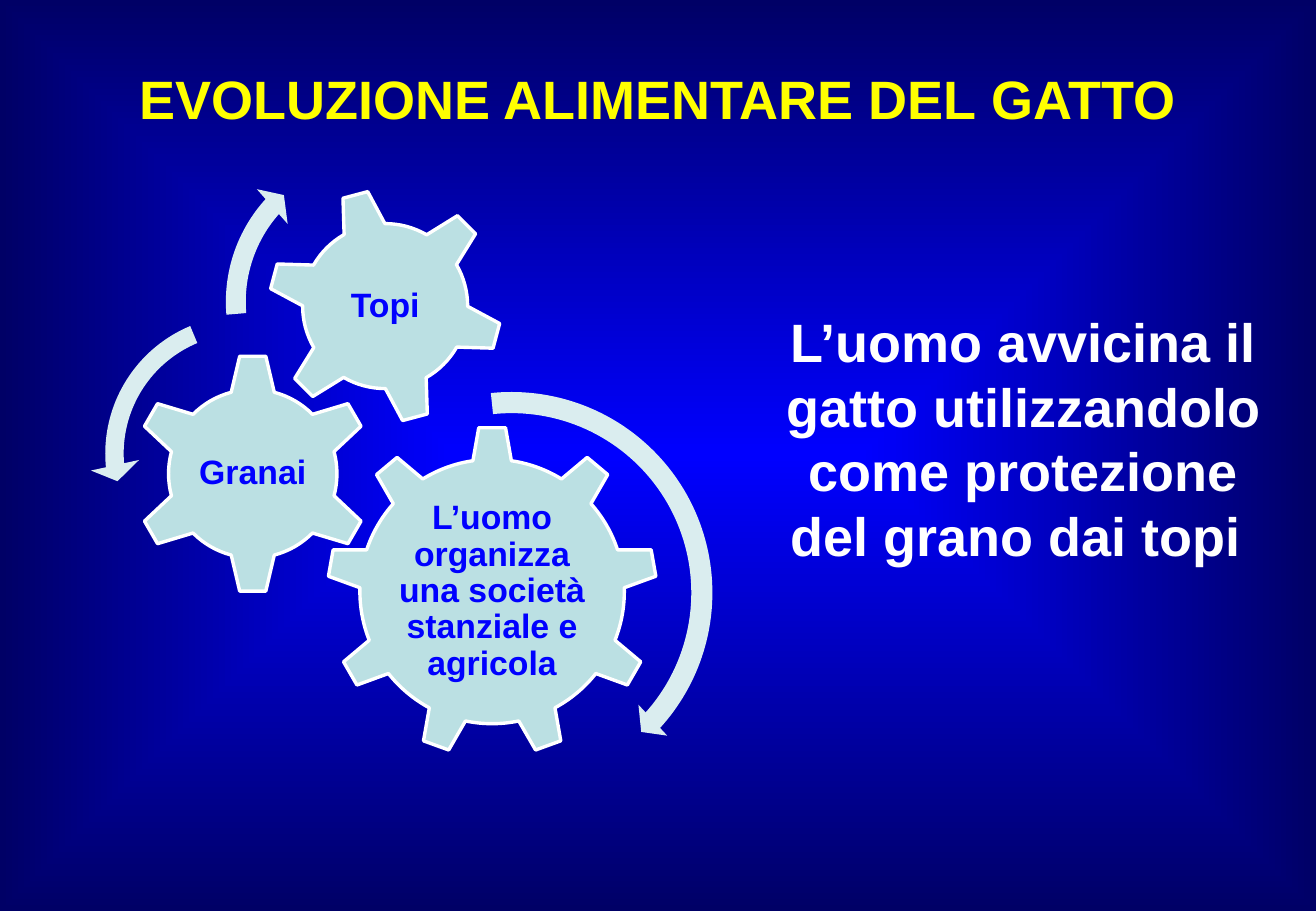
from dataclasses import dataclass
from lxml.etree import SubElement
from pptx import Presentation
from pptx.dml.color import RGBColor
from pptx.enum.shapes import MSO_SHAPE
from pptx.enum.text import MSO_ANCHOR, PP_ALIGN
from pptx.oxml.ns import qn
from pptx.util import Inches, Pt


@dataclass(frozen=True)
class Theme:
    font: str = "Arial"
    glow: str = "0000FF"
    edge: str = "000066"
    title: str = "FFFF00"
    body: str = "FFFFFF"
    gear: str = "BBE0E3"
    outline: str = "FFFFFF"
    arrow: str = "DAEDEF"
    label: str = "0000FF"
    heading_size: int = 32
    label_size: int = 20


@dataclass(frozen=True)
class Box:
    left: float
    top: float
    width: float
    height: float

    def centred(self, x, y, width, height):
        across, down = self.width / 100, self.height / 100
        return Box(self.left + (x - width / 2) * across,
                   self.top + (y - height / 2) * down,
                   width * across, height * down)

    def emu(self):
        return [Inches(v) for v in (self.left, self.top, self.width, self.height)]


THEME = Theme()
PAGE = Box(0, 0, 10.83, 7.5)
TITLE = Box(0.54, 0.3, 9.75, 1.01)
GEARS = Box(1, 1.5, 5, 5)
MESSAGE = Box(6.27, 2.49, 4.31, 2.26)


def paint_background(slide):
    fill = slide.background.fill
    fill.gradient()
    for stop, color in zip(fill.gradient_stops, (THEME.glow, THEME.edge)):
        stop.color.rgb = RGBColor.from_string(color)
    gradient = slide.element.xpath(".//a:gradFill")[0]
    gradient.remove(gradient.find(qn("a:lin")))
    radial = SubElement(gradient, qn("a:path"))
    radial.set("path", "shape")
    focus = SubElement(radial, qn("a:fillToRect"))
    for side in "ltrb":
        focus.set(side, "50000")


def add_text(slide, box, text, size, color, anchor=MSO_ANCHOR.MIDDLE, inset=None, spacing=None):
    frame = slide.shapes.add_textbox(*box.emu()).text_frame
    frame.word_wrap = True
    frame.vertical_anchor = anchor
    if inset is not None:
        frame.margin_left = frame.margin_right = Inches(inset)
        frame.margin_top = frame.margin_bottom = Inches(inset)
    paragraph = frame.paragraphs[0]
    paragraph.text = text
    paragraph.alignment = PP_ALIGN.CENTER
    paragraph.line_spacing = spacing
    font = paragraph.font
    font.name, font.size, font.bold = THEME.font, Pt(size), True
    font.color.rgb = RGBColor.from_string(color)


def add_solid(slide, preset, box, color):
    solid = slide.shapes.add_shape(preset, *box.emu())
    solid.shadow.inherit = False
    solid.fill.solid()
    solid.fill.fore_color.rgb = RGBColor.from_string(color)
    solid.line.fill.background()
    return solid


def add_gear(slide, box, preset, x, y, size, rotation, text, label_width, label_height):
    gear = add_solid(slide, preset, box.centred(x, y, size, size), THEME.gear)
    gear.rotation = rotation
    gear.line.color.rgb = RGBColor.from_string(THEME.outline)
    gear.line.width = Pt(2)
    add_text(slide, box.centred(x, y, label_width, label_height), text,
             THEME.label_size, THEME.label, inset=0.03, spacing=0.9)


def add_turn(slide, box, preset, x, y, size, adjustments):
    turn = add_solid(slide, preset, box.centred(x, y, size, size), THEME.arrow)
    for index, value in enumerate(adjustments):
        turn.adjustments[index] = value


def draw_gears(slide, box):
    gears = (
        (MSO_SHAPE.GEAR_9, 61, 67.4, 54.4, 0,
         "L’uomo organizza una società stanziale e agricola", 32.6, 28),
        (MSO_SHAPE.GEAR_6, 21.6, 48, 39.6, 0, "Granai", 19.6, 19.6),
        (MSO_SHAPE.GEAR_6, 43.4, 20.4, 38.8, 345, "Topi", 21.8, 21.8),
    )
    turns = (
        (MSO_SHAPE.CIRCULAR_ARROW, 64.2, 67.6, 69.6,
         (0.05, 2.99, 25.24, 158.45, 0.05)),
        (MSO_SHAPE.LEFT_CIRCULAR_ARROW, 20.1, 44.7, 50.6,
         (0.06, 4.3, 104.89, 148.38, 0.08)),
        (MSO_SHAPE.CIRCULAR_ARROW, 42.3, 19.7, 54.6,
         (0.06, 3.94, 133.14, 105.08, 0.07)),
    )
    for gear in gears:
        add_gear(slide, box, *gear)
    for turn in turns:
        add_turn(slide, box, *turn)


def main():
    deck = Presentation()
    deck.slide_width, deck.slide_height = Inches(PAGE.width), Inches(PAGE.height)
    slide = deck.slides.add_slide(deck.slide_layouts[6])
    paint_background(slide)
    add_text(slide, TITLE, "EVOLUZIONE ALIMENTARE DEL GATTO",
             THEME.heading_size, THEME.title)
    draw_gears(slide, GEARS)
    add_text(slide, MESSAGE,
             "L’uomo avvicina il gatto utilizzandolo come protezione del grano dai topi ",
             THEME.heading_size, THEME.body, MSO_ANCHOR.TOP)
    deck.save("out.pptx")


if __name__ == "__main__":
    main()
